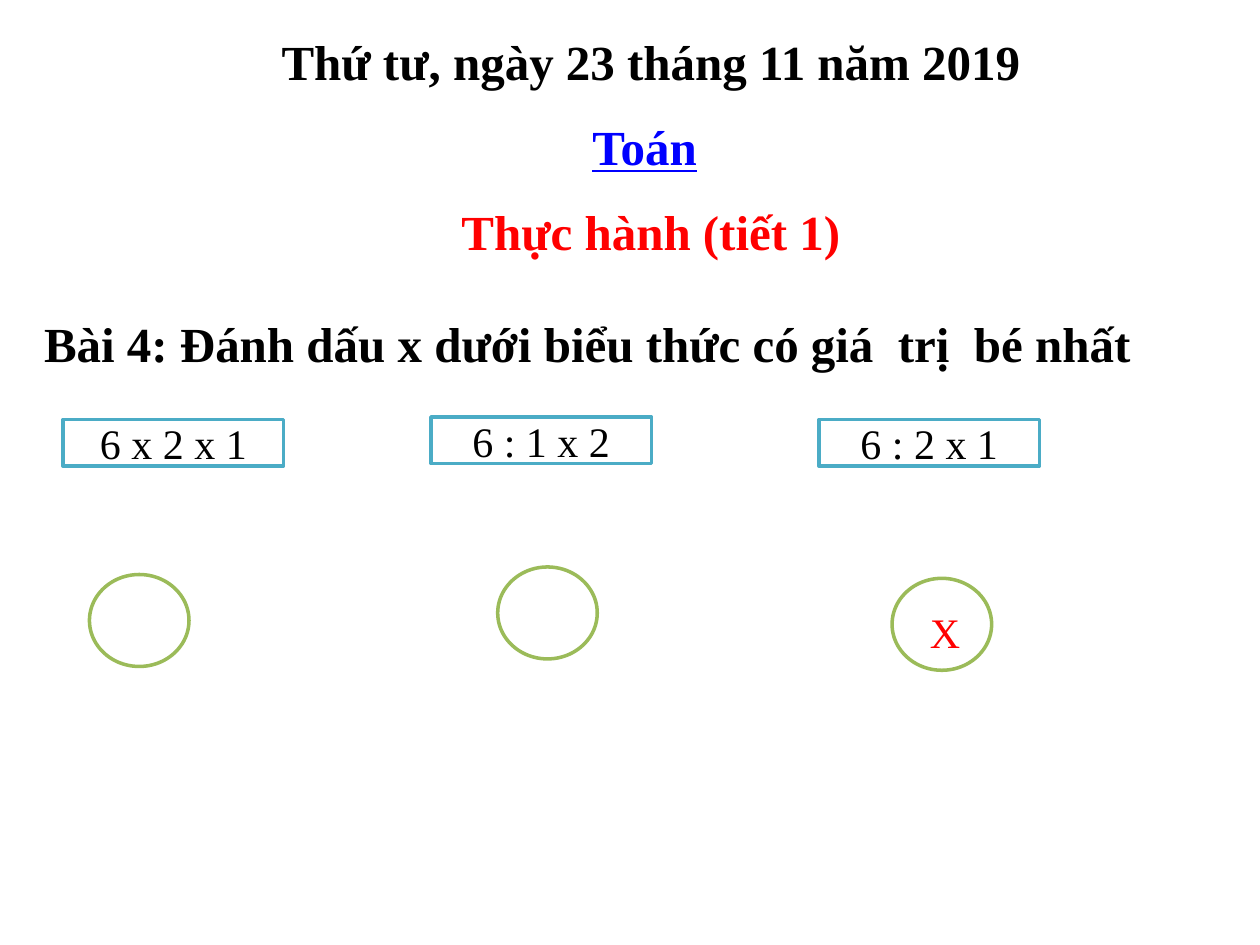
from typing import NamedTuple

from pptx import Presentation
from pptx.dml.color import RGBColor
from pptx.enum import shapes, text
from pptx.util import Inches, Pt

FONT = "Times New Roman"
COLORS = {
    "black": "000000",
    "white": "FFFFFF",
    "blue": "0000FF",
    "red": "FF0000",
    "teal": "4BACC6",
    "green": "9BBB59",
}


class Choice(NamedTuple):
    expression: str
    box_left: float
    box_top: float
    circle_left: float
    circle_top: float


CHOICES = [
    Choice("6 x 2 x 1", 0.5, 3.33, 0.71, 4.56),
    Choice("6 : 1 x 2", 3.42, 3.31, 3.95, 4.5),
    Choice("6 : 2 x 1", 6.5, 3.33, 7.08, 4.59),
]


def rgb(name: str) -> RGBColor:
    return RGBColor.from_string(COLORS[name])


def place(sp, left: float, top: float, width: float, height: float) -> None:
    sp.left, sp.top = Inches(left), Inches(top)
    sp.width, sp.height = Inches(width), Inches(height)


def write(p, words: str, *, size=28, color="black", bold=False, underline=False,
          align=text.PP_ALIGN.CENTER, before=0) -> None:
    """Add a formatted run to a paragraph."""
    p.alignment = align
    p.space_before = Pt(before)
    r = p.add_run()
    r.text = words
    r.font.name, r.font.size = FONT, Pt(size)
    r.font.bold, r.font.underline = bold, underline
    r.font.color.rgb = rgb(color)


def add_outline(slide, kind, line: str, left: float, top: float,
                width: float, height: float):
    sp = slide.shapes.add_shape(kind, Inches(left), Inches(top),
                                Inches(width), Inches(height))
    sp.shadow.inherit = False
    sp.fill.solid()
    sp.fill.fore_color.rgb = rgb("white")
    sp.line.color.rgb = rgb(line)
    sp.line.width = Pt(2)
    return sp


def add_heading(slide) -> None:
    title = slide.shapes.title
    place(title, 1, 0.2, 8.33, 1.99)
    tf = title.text_frame
    tf.word_wrap = True
    tf.auto_size = text.MSO_AUTO_SIZE.NONE
    tf.vertical_anchor = text.MSO_ANCHOR.TOP
    write(tf.paragraphs[0], "Thứ tư, ngày 23 tháng 11 năm 2019", bold=True)
    subject = tf.add_paragraph()
    write(subject, "Toán", color="blue", bold=True, underline=True, before=15)
    write(subject, " ", color="blue", bold=True, before=15)
    write(tf.add_paragraph(), "Thực hành (tiết 1)", color="red", bold=True, before=15)


def add_text(slide, words: str, left: float, top: float, width: float,
             height: float, **style):
    sp = slide.shapes.add_textbox(Inches(left), Inches(top),
                                  Inches(width), Inches(height))
    tf = sp.text_frame
    tf.word_wrap = True
    write(tf.paragraphs[0], words, **style)
    return tf


def add_choice(slide, choice: Choice) -> None:
    box = add_outline(slide, shapes.MSO_SHAPE.RECTANGLE, "teal",
                      choice.box_left, choice.box_top, 1.75, 0.37)
    box.text_frame.vertical_anchor = text.MSO_ANCHOR.MIDDLE
    write(box.text_frame.paragraphs[0], choice.expression, size=24)
    add_outline(slide, shapes.MSO_SHAPE.FLOWCHART_CONNECTOR, "green",
                choice.circle_left, choice.circle_top, 0.79, 0.73)


def main() -> None:
    prs = Presentation()
    prs.slide_width, prs.slide_height = Inches(10), Inches(7.5)
    slide = prs.slides.add_slide(prs.slide_layouts[5])

    add_heading(slide)
    add_text(slide, "Bài 4: Đánh dấu x dưới biểu thức có giá  trị  bé nhất",
             -1.3, 2.44, 11.92, 1.28, bold=True)
    for choice in CHOICES:
        add_choice(slide, choice)
    answer = add_text(slide, "X", 5.83, 4.61, 2.9, 0.64, size=24, color="red",
                      align=text.PP_ALIGN.LEFT)
    answer.margin_left, answer.margin_top = Inches(1.55), Inches(0.2)

    prs.save("out.pptx")


if __name__ == "__main__":
    main()
